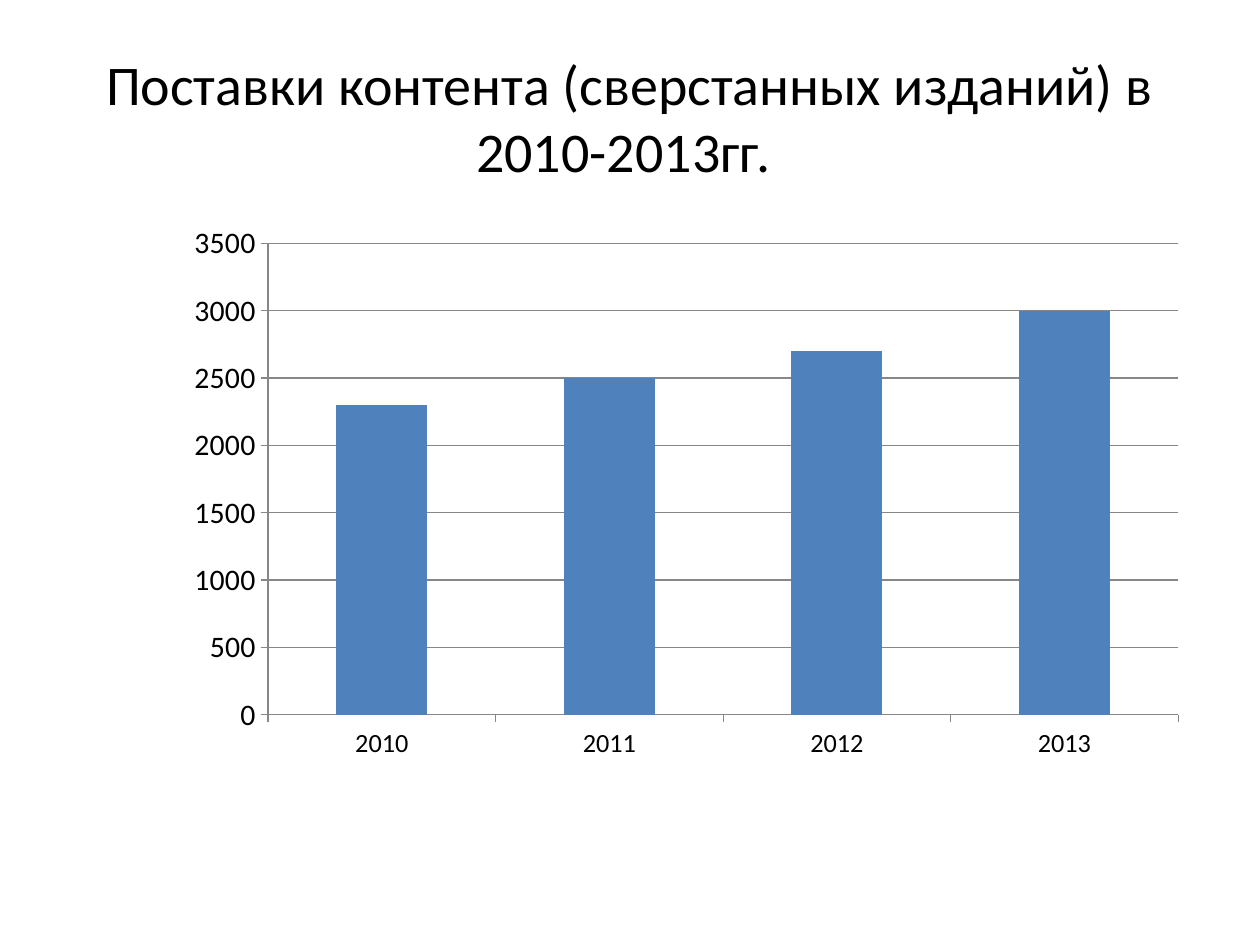
from dataclasses import dataclass

import lxml.etree
import pptx
import pptx.chart.data
import pptx.dml.color
import pptx.enum.chart
import pptx.enum.text
import pptx.oxml.ns
import pptx.util

PX = 914400 // 126
FONT = "Calibri"
BLACK, GRAY, BLUE = "000000", "878787", "4F81BD"


@dataclass
class Area:
    left: int
    top: int
    width: int
    height: int

    def emu(self) -> list[int]:
        return [n * PX for n in (self.left, self.top, self.width, self.height)]


@dataclass
class Delivery:
    year: str
    count: int


DELIVERIES = [
    Delivery("2010", 2300),
    Delivery("2011", 2500),
    Delivery("2012", 2700),
    Delivery("2013", 3000),
]


def color(value: str) -> pptx.dml.color.RGBColor:
    return pptx.dml.color.RGBColor.from_string(value)


def style_font(font, size: int, fill: str = BLACK) -> None:
    font.name = FONT
    font.size = pptx.util.Pt(size)
    font.bold = False
    font.color.rgb = color(fill)


def style_line(line) -> None:
    line.color.rgb = color(GRAY)
    line.width = pptx.util.Pt(0.75)


def add_text(slide, text: str, area: Area, *, size: int, fill: str = BLACK) -> None:
    box = slide.shapes.add_textbox(*area.emu())
    frame = box.text_frame
    frame.word_wrap = True
    frame.vertical_anchor = pptx.enum.text.MSO_ANCHOR.MIDDLE
    para = frame.paragraphs[0]
    para.alignment = pptx.enum.text.PP_ALIGN.CENTER
    span = para.add_run()
    span.text = text
    style_font(span.font, size, fill)


def style_axis(axis, size: int, gridlines: bool) -> None:
    axis.major_tick_mark = pptx.enum.chart.XL_TICK_MARK.OUTSIDE
    axis.minor_tick_mark = pptx.enum.chart.XL_TICK_MARK.NONE
    axis.has_major_gridlines = gridlines
    if gridlines:
        style_line(axis.major_gridlines.format.line)
    style_line(axis.format.line)
    style_font(axis.tick_labels.font, size)


def set_inner_layout(chart, x: float, y: float, w: float, h: float) -> None:
    qn = pptx.oxml.ns.qn
    plot_area = chart.plots[0]._element.getparent()
    for old in plot_area.findall(qn("c:layout")):
        plot_area.remove(old)
    layout = lxml.etree.Element(qn("c:layout"))
    plot_area.insert(0, layout)
    manual = lxml.etree.SubElement(layout, qn("c:manualLayout"))
    settings = {"layoutTarget": "inner", "xMode": "edge", "yMode": "edge",
                "x": x, "y": y, "w": w, "h": h}
    for tag, value in settings.items():
        lxml.etree.SubElement(manual, qn(f"c:{tag}"), val=str(value))


def add_delivery_chart(slide, deliveries: list[Delivery], area: Area) -> None:
    data = pptx.chart.data.CategoryChartData()
    data.categories = [delivery.year for delivery in deliveries]
    data.add_series("Series 1", [delivery.count for delivery in deliveries])
    kind = pptx.enum.chart.XL_CHART_TYPE.COLUMN_STACKED
    chart = slide.shapes.add_chart(kind, *area.emu(), data).chart
    chart.has_legend = False
    chart.has_title = False
    style_font(chart.font, 10)

    plot = chart.plots[0]
    plot.vary_by_categories = False
    plot.gap_width = 150
    plot.overlap = 100
    bars = plot.series[0].format.fill
    bars.solid()
    bars.fore_color.rgb = color(BLUE)

    style_axis(chart.category_axis, 15, gridlines=False)
    style_axis(chart.value_axis, 17, gridlines=True)
    chart.value_axis.minimum_scale = 0
    chart.value_axis.maximum_scale = 3500
    chart.value_axis.major_unit = 500
    set_inner_layout(chart, 0.13, 0.05, 0.87, 0.83)


def main() -> None:
    deck = pptx.Presentation()
    deck.slide_width = pptx.util.Inches(10)
    deck.slide_height = pptx.util.Inches(7.5)
    slide = deck.slides.add_slide(deck.slide_layouts[6])
    add_text(slide, "Поставки контента (сверстанных изданий) в 2010-2013гг. ",
             Area(63, 38, 1134, 157), size=32)
    add_delivery_chart(slide, DELIVERIES, Area(132, 215, 1047, 568))
    deck.save("out.pptx")


if __name__ == "__main__":
    main()
